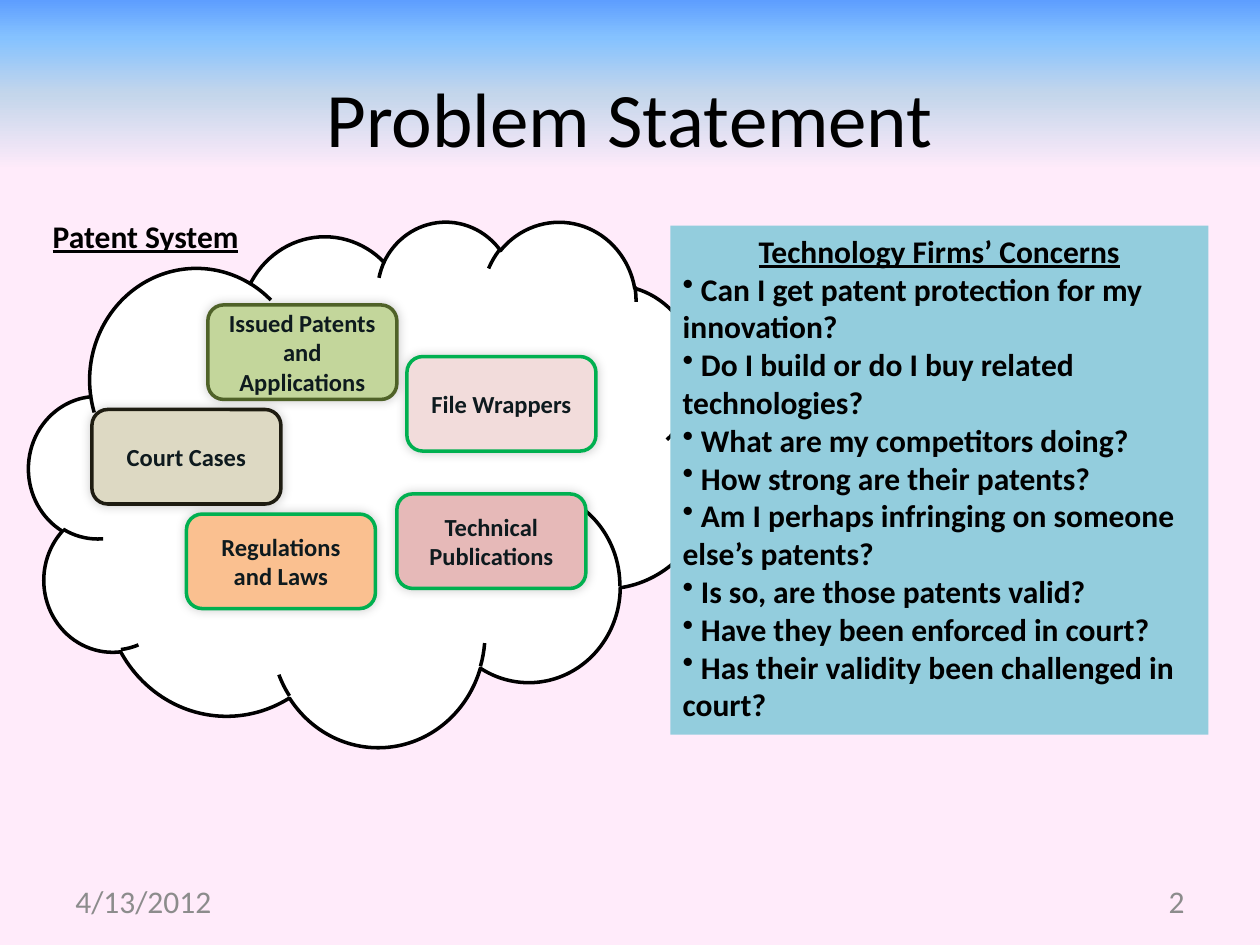
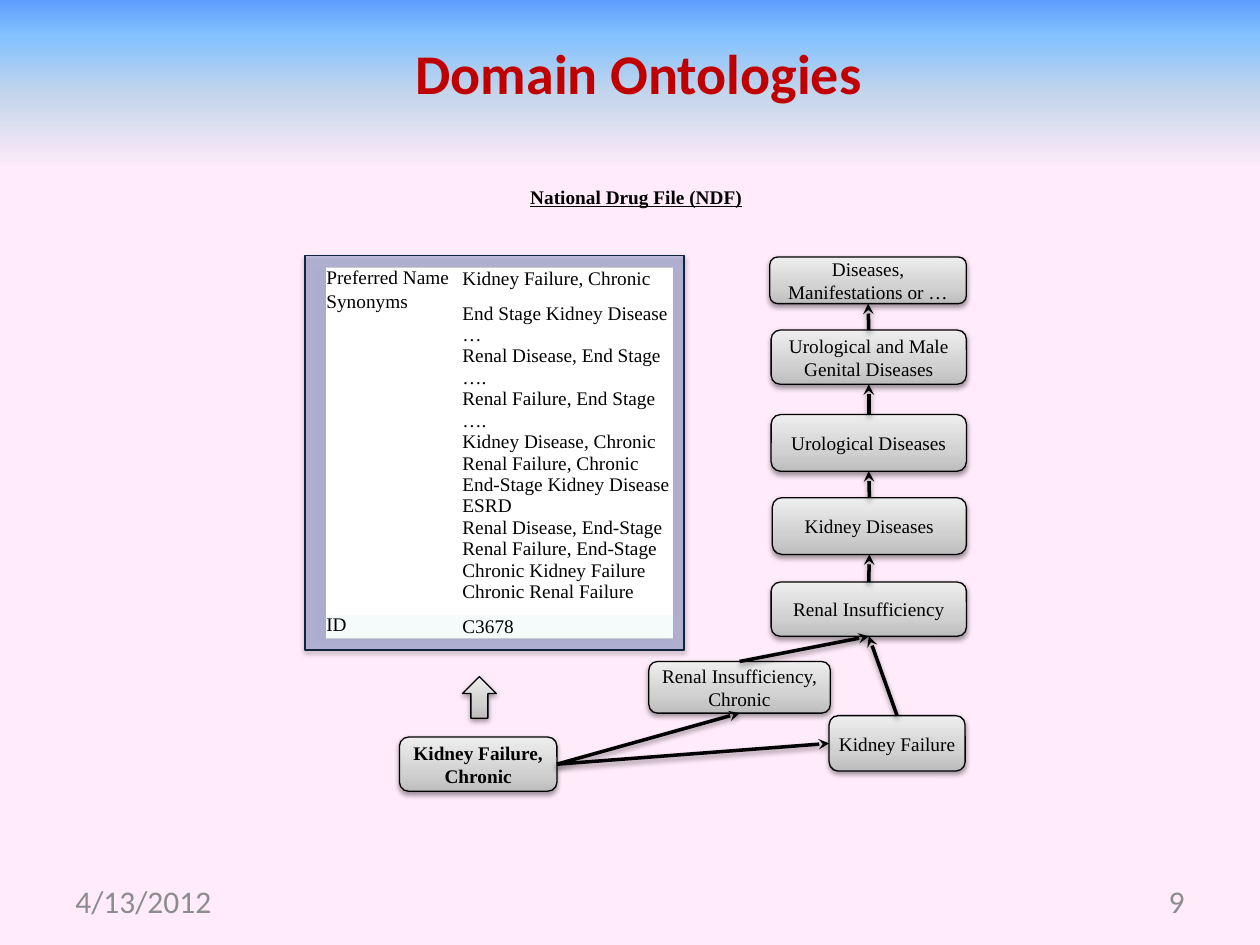
from lxml import etree
from pptx import Presentation
from pptx.dml.color import RGBColor
from pptx.enum.shapes import MSO_CONNECTOR, MSO_SHAPE
from pptx.enum.text import MSO_ANCHOR, PP_ALIGN
from pptx.oxml.ns import qn
from pptx.util import Inches, Pt

STRAIGHT = MSO_CONNECTOR.STRAIGHT
ROUNDED, RECTANGLE = MSO_SHAPE.ROUNDED_RECTANGLE, MSO_SHAPE.RECTANGLE
CLOUD, UP_ARROW = MSO_SHAPE.CLOUD, MSO_SHAPE.UP_ARROW
LEFT, CENTER, RIGHT = PP_ALIGN.LEFT, PP_ALIGN.CENTER, PP_ALIGN.RIGHT
TOP, MIDDLE = MSO_ANCHOR.TOP, MSO_ANCHOR.MIDDLE
TOP_SIDE, LEFT_SIDE, BOTTOM_SIDE, RIGHT_SIDE = range(4)

BLACK = RGBColor(0x00, 0x00, 0x00)
WHITE = RGBColor(0xFF, 0xFF, 0xFF)
FOOTER_GRAY = RGBColor(0x8C, 0x8C, 0x8C)
TITLE_RED = RGBColor(0xC0, 0x00, 0x00)
SOURCE_TEXT = RGBColor(0x0E, 0x1A, 0x1E)
GREEN = RGBColor(0x00, 0xB0, 0x50)
DARK_GREEN = RGBColor(0x4F, 0x62, 0x28)
LIGHT_GREEN = RGBColor(0xC3, 0xD6, 0x9B)
TAN = RGBColor(0xDD, 0xD9, 0xC3)
DARK_TAN = RGBColor(0x1E, 0x1C, 0x11)
PALE_ROSE = RGBColor(0xF2, 0xDC, 0xDB)
ROSE = RGBColor(0xE6, 0xB9, 0xB8)
ORANGE = RGBColor(0xFA, 0xC0, 0x90)
CONCERN_BLUE = RGBColor(0x93, 0xCD, 0xDD)
NAVY = RGBColor(0x0F, 0x24, 0x3E)
ID_ROW = RGBColor(0xF5, 0xFA, 0xFA)
RULE_GRAY = RGBColor(0xCC, 0xCC, 0xCC)

SKY_STOPS = [(0, "5E9EFF", 100), (4, "85C2FF", 100), (10, "C4D6EB", 100), (18, "FFEBFA", 100)]
GRAY_STOPS = [(0, "BDBDBD", 100), (35, "D1D1D1", 100), (100, "EEEEEE", 100)]
PANEL_STOPS = [(45, "FFFFFF", 100), (100, "5E7CC5", 32)]
SOFT_SHADOW = (20, 6, 0, 315)
DROP_SHADOW = (38, 3.1, 1.6, 90)
SANS, SERIF = "Calibri", "Times New Roman"


def set_gradient(element, stops, angle=None):
    """Fill in the element's gradient: linear at an angle, else from the centre."""
    gradient = element.find(".//" + qn("a:gradFill"))
    for child in list(gradient):
        gradient.remove(child)
    stop_list = etree.SubElement(gradient, qn("a:gsLst"))
    for position, color, opacity in stops:
        stop = etree.SubElement(stop_list, qn("a:gs"), pos=str(position * 1000))
        rgb = etree.SubElement(stop, qn("a:srgbClr"), val=color)
        if opacity < 100:
            etree.SubElement(rgb, qn("a:alpha"), val=str(opacity * 1000))
    if angle is not None:
        etree.SubElement(gradient, qn("a:lin"), ang=str(angle * 60000), scaled="0")
    else:
        center = etree.SubElement(gradient, qn("a:path"), {"path": "rect"})
        etree.SubElement(center, qn("a:fillToRect"), l="50000", t="50000", r="50000", b="50000")


def add_shadow(shape, opacity, blur, distance, direction):
    properties = shape.element.spPr
    effects = properties.find(qn("a:effectLst"))
    if effects is None:
        effects = etree.SubElement(properties, qn("a:effectLst"))
    shadow = etree.SubElement(
        effects, qn("a:outerShdw"), blurRad=str(Pt(blur)), dist=str(Pt(distance)),
        dir=str(direction * 60000), algn="ctr", rotWithShape="0")
    rgb = etree.SubElement(shadow, qn("a:srgbClr"), val="000000")
    etree.SubElement(rgb, qn("a:alpha"), val=str(opacity * 1000))


presentation = Presentation()
presentation.slide_width, presentation.slide_height = Inches(10), Inches(7.5)

# Shared background
master = presentation.slide_master
master.background.fill.gradient()
set_gradient(master.element, SKY_STOPS, 90)

# Both slides: title, small heading, date and slide number
slides = []
for title, title_box, title_size, title_bold, title_color, heading, heading_box, heading_font, heading_size, number in [
    ("Problem Statement", (0.5, 0.3, 9, 1.25), 44, False, BLACK,
     "Patent System", (0.32, 1.67, 1.69, 0.4), SANS, 18, "2"),
    ("Domain Ontologies", (3.17, 0.25, 3.8, 0.64), 32, True, TITLE_RED,
     "National Drug File (NDF)", (4.11, 1.42, 1.89, 0.29), SERIF, 11, "9"),
]:
    slide = presentation.slides.add_slide(presentation.slide_layouts[5])
    slides.append(slide)
    placeholder = slide.shapes.title
    placeholder.left, placeholder.top, placeholder.width, placeholder.height = map(Inches, title_box)
    placeholder.text_frame.text = title
    placeholder.text_frame.vertical_anchor = MIDDLE
    paragraph = placeholder.text_frame.paragraphs[0]
    paragraph.alignment = CENTER
    paragraph.font.name, paragraph.font.size = SANS, Pt(title_size)
    paragraph.font.bold, paragraph.font.color.rgb = title_bold, title_color

    if number == "2":
        cloud = slide.shapes.add_shape(CLOUD, Inches(0.23), Inches(1.75), Inches(5.42), Inches(4.17))
        cloud.shadow.inherit = False
        cloud.fill.solid()
        cloud.fill.fore_color.rgb = WHITE
        cloud.line.color.rgb, cloud.line.width = BLACK, Pt(2)

    for text, box, alignment, font, size, color, is_heading in [
        (heading, heading_box, LEFT, heading_font, heading_size, BLACK, True),
        ("4/13/2012", (0.5, 6.95, 2.33, 0.4), LEFT, SANS, 18, FOOTER_GRAY, False),
        (number, (7.17, 6.95, 2.33, 0.4), RIGHT, SANS, 18, FOOTER_GRAY, False),
    ]:
        text_box = slide.shapes.add_textbox(*map(Inches, box))
        text_box.text_frame.text = text
        text_box.text_frame.word_wrap = not is_heading
        text_box.text_frame.vertical_anchor = TOP if is_heading else MIDDLE
        paragraph = text_box.text_frame.paragraphs[0]
        paragraph.alignment = alignment
        paragraph.font.name, paragraph.font.size = font, Pt(size)
        paragraph.font.color.rgb = color
        paragraph.font.bold = paragraph.font.underline = is_heading

problem_slide, ontology_slide = slides

# Information sources inside the cloud
for text, left, top, fill, outline in [
    ("Issued Patents and Applications", 1.65, 2.42, LIGHT_GREEN, DARK_GREEN),
    ("Court Cases", 0.73, 3.25, TAN, DARK_TAN),
    ("File Wrappers", 3.23, 2.83, PALE_ROSE, GREEN),
    ("Technical Publications", 3.15, 3.92, ROSE, GREEN),
    ("Regulations and Laws", 1.48, 4.08, ORANGE, GREEN),
]:
    source = problem_slide.shapes.add_shape(ROUNDED, Inches(left), Inches(top), Inches(1.5), Inches(0.75))
    source.shadow.inherit = False
    source.fill.solid()
    source.fill.fore_color.rgb = fill
    source.line.color.rgb, source.line.width = outline, Pt(2)
    add_shadow(source, *SOFT_SHADOW)
    source.text_frame.text = text
    source.text_frame.vertical_anchor = MIDDLE
    paragraph = source.text_frame.paragraphs[0]
    paragraph.alignment = CENTER
    paragraph.font.name, paragraph.font.size = SANS, Pt(14)
    paragraph.font.bold, paragraph.font.color.rgb = True, SOURCE_TEXT

# Concerns panel
concerns = problem_slide.shapes.add_shape(RECTANGLE, Inches(5.32), Inches(1.79), Inches(4.27), Inches(4.04))
concerns.shadow.inherit = False
concerns.fill.solid()
concerns.fill.fore_color.rgb = CONCERN_BLUE
concerns.line.fill.background()
concerns.text_frame.vertical_anchor = TOP
concerns.text_frame.text = "\n".join([
    "Technology Firms’ Concerns",
    " Can I get patent protection for my innovation?",
    " Do I build or do I buy related technologies?",
    " What are my competitors doing?",
    " How strong are their patents?",
    " Am I perhaps infringing on someone else’s patents?",
    " Is so, are those patents valid?",
    " Have they been enforced in court?",
    " Has their validity been challenged in court?",
])
for index, paragraph in enumerate(concerns.text_frame.paragraphs):
    paragraph.alignment = LEFT if index else CENTER
    paragraph.font.name, paragraph.font.size = SANS, Pt(18)
    paragraph.font.bold, paragraph.font.color.rgb = True, BLACK
    paragraph.font.underline = index == 0
    if index:
        bullet = etree.Element(qn("a:buChar"), char="•")
        paragraph.font._element.addprevious(bullet)

# Disease hierarchy
nodes = {}
for key, text, box in [
    ("diseases", "Diseases, Manifestations or …", (6.11, 2.04, 1.56, 0.37)),
    ("urological male", "Urological and Male Genital Diseases", (6.12, 2.62, 1.55, 0.43)),
    ("urological", "Urological Diseases", (6.12, 3.29, 1.55, 0.45)),
    ("kidney", "Kidney Diseases", (6.13, 3.95, 1.54, 0.45)),
    ("renal", "Renal Insufficiency", (6.12, 4.62, 1.55, 0.43)),
    ("renal chronic", "Renal Insufficiency, Chronic", (5.15, 5.25, 1.44, 0.41)),
    ("failure", "Kidney Failure", (6.58, 5.68, 1.08, 0.44)),
    ("failure chronic", "Kidney Failure, Chronic", (3.17, 5.85, 1.25, 0.43)),
    ("arrow", "", (3.67, 5.37, 0.27, 0.33)),
]:
    kind = UP_ARROW if key == "arrow" else ROUNDED
    node = nodes[key] = ontology_slide.shapes.add_shape(kind, *map(Inches, box))
    node.shadow.inherit = False
    node.fill.gradient()
    set_gradient(node.element.spPr, GRAY_STOPS, 270)
    node.line.color.rgb, node.line.width = BLACK, Pt(0.75)
    add_shadow(node, *DROP_SHADOW)
    if not text:
        continue
    frame = node.text_frame
    frame.margin_left = frame.margin_top = frame.margin_right = frame.margin_bottom = 0
    frame.text = text
    frame.vertical_anchor = MIDDLE
    paragraph = frame.paragraphs[0]
    paragraph.alignment = CENTER
    paragraph.font.name, paragraph.font.size = SERIF, Pt(11)
    paragraph.font.bold, paragraph.font.color.rgb = key == "failure chronic", BLACK

# Arrows from each term to its broader term
for child, child_side, parent, parent_side in [
    ("urological male", TOP_SIDE, "diseases", BOTTOM_SIDE),
    ("urological", TOP_SIDE, "urological male", BOTTOM_SIDE),
    ("kidney", TOP_SIDE, "urological", BOTTOM_SIDE),
    ("renal", TOP_SIDE, "kidney", BOTTOM_SIDE),
    ("renal chronic", TOP_SIDE, "renal", BOTTOM_SIDE),
    ("failure", TOP_SIDE, "renal", BOTTOM_SIDE),
    ("failure chronic", RIGHT_SIDE, "failure", LEFT_SIDE),
    ("failure chronic", RIGHT_SIDE, "renal chronic", BOTTOM_SIDE),
]:
    link = ontology_slide.shapes.add_connector(STRAIGHT, 0, 0, 0, 0)
    link.begin_connect(nodes[child], child_side)
    link.end_connect(nodes[parent], parent_side)
    link.line.color.rgb, link.line.width = BLACK, Pt(2)
    etree.SubElement(link.line._get_or_add_ln(), qn("a:tailEnd"), type="stealth")
    add_shadow(link, *DROP_SHADOW)

# Panel behind the concept table
panel = ontology_slide.shapes.add_shape(RECTANGLE, Inches(2.42), Inches(2.03), Inches(3.01), Inches(3.13))
panel.shadow.inherit = False
panel.fill.gradient()
set_gradient(panel.element.spPr, PANEL_STOPS)
panel.line.color.rgb, panel.line.width = NAVY, Pt(0.75)
add_shadow(panel, *DROP_SHADOW)

# Concept table
synonyms = [
    "End Stage Kidney Disease", "…", "Renal Disease, End Stage", "….",
    "Renal Failure, End Stage", "….", "Kidney Disease, Chronic",
    "Renal Failure, Chronic", "End-Stage Kidney Disease", "ESRD",
    "Renal Disease, End-Stage", "Renal Failure, End-Stage",
    "Chronic Kidney Failure", "Chronic Renal Failure",
]
rows = [
    ("Preferred Name", "Kidney Failure, Chronic", 0.19, WHITE),
    ("Synonyms", "\n".join(synonyms), 2.56, WHITE),
    ("ID", "C3678", 0.19, ID_ROW),
]
table = ontology_slide.shapes.add_table(3, 2, Inches(2.59), Inches(2.12), Inches(2.75), Inches(2.94)).table
table.first_row = table.horz_banding = False
table.columns[0].width, table.columns[1].width = Inches(1.08), Inches(1.67)
for row_index, (label, value, height, fill) in enumerate(rows):
    table.rows[row_index].height = Inches(height)
    for column_index, text in enumerate((label, value)):
        cell = table.cell(row_index, column_index)
        cell.text = text
        cell.margin_left = cell.margin_top = cell.margin_right = cell.margin_bottom = 0
        cell.vertical_anchor = MIDDLE if column_index else TOP
        cell.fill.solid()
        cell.fill.fore_color.rgb = fill
        for paragraph in cell.text_frame.paragraphs:
            paragraph.font.name, paragraph.font.size = SERIF, Pt(11)
            paragraph.font.color.rgb = BLACK
        cell_properties = cell._tc.get_or_add_tcPr()
        for position, side in enumerate(("a:lnL", "a:lnR", "a:lnT", "a:lnB")):
            border = etree.Element(qn(side), w=str(Pt(0.75)))
            if side == "a:lnB" or (side == "a:lnT" and row_index == 0):
                border_fill = etree.SubElement(border, qn("a:solidFill"))
                etree.SubElement(border_fill, qn("a:srgbClr"), val=str(RULE_GRAY))
            else:
                etree.SubElement(border, qn("a:noFill"))
            cell_properties.insert(position, border)

presentation.save("out.pptx")
